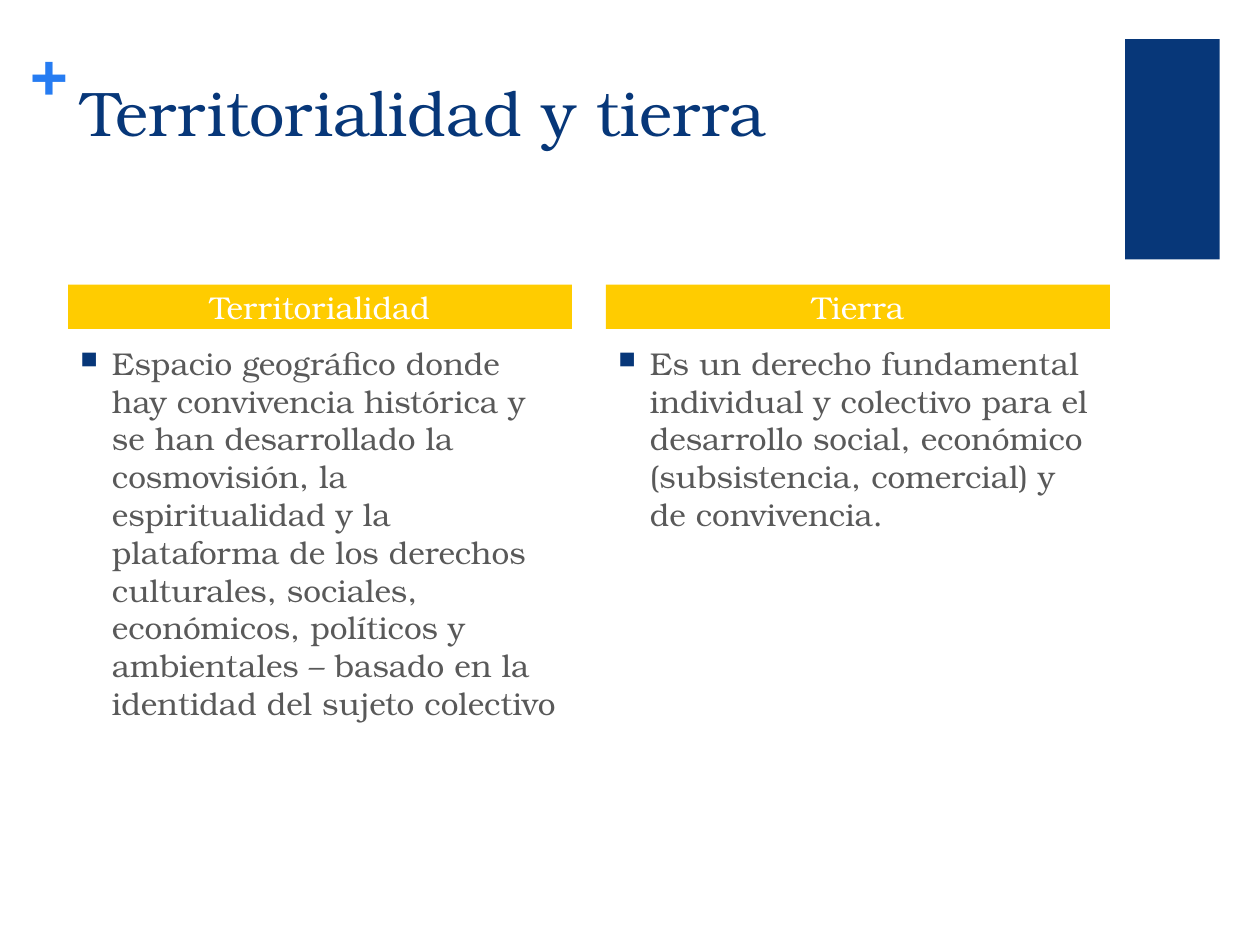
from dataclasses import dataclass

import pptx
import pptx.dml.color
import pptx.enum.shapes
import pptx.enum.text
import pptx.oxml
import pptx.oxml.ns
import pptx.util

Inches = pptx.util.Inches
Pt = pptx.util.Pt
RGBColor = pptx.dml.color.RGBColor
Align = pptx.enum.text.PP_ALIGN
Anchor = pptx.enum.text.MSO_ANCHOR

NAVY = RGBColor(0x07, 0x37, 0x79)
BLUE = RGBColor(0x26, 0x7C, 0xF2)
YELLOW = RGBColor(0xFF, 0xCC, 0x00)
GRAY = RGBColor(0x59, 0x59, 0x59)
WHITE = RGBColor(0xFF, 0xFF, 0xFF)
FONT = "TeX Gyre Bonum"

# Two-column grid, in inches
LEFT, COLUMN_WIDTH, COLUMN_STEP = 0.54, 4, 4.27
HEADING_TOP, HEADING_HEIGHT = 2.26, 0.35
BODY_TOP, BODY_HEIGHT = 2.68, 4.02


@dataclass
class Column:
    heading: str
    body: str


COLUMNS = [
    Column(
        "Territorialidad",
        "Espacio geográfico donde hay convivencia histórica y se han "
        "desarrollado la cosmovisión, la espiritualidad y la plataforma de "
        "los derechos culturales, sociales, económicos, políticos y "
        "ambientales – basado en la identidad del sujeto colectivo",
    ),
    Column(
        "Tierra",
        "Es un derecho fundamental individual y colectivo para el desarrollo "
        "social, económico (subsistencia, comercial) y de convivencia.",
    ),
]


def set_all(target, values: dict) -> None:
    for name, value in values.items():
        setattr(target, name, value)


def write(box, text: str, size: float, color: RGBColor, bold: bool = False,
          align=Align.LEFT, frame_format: dict | None = None):
    """Fill a shape with one formatted paragraph and return the paragraph."""
    frame = box.text_frame
    set_all(frame, {"word_wrap": True, "vertical_anchor": Anchor.TOP,
                    **(frame_format or {})})
    para = frame.paragraphs[0]
    para.alignment = align
    span = para.add_run()
    span.text = text
    set_all(span.font, {"name": FONT, "size": Pt(size), "bold": bold})
    span.font.color.rgb = color
    return para


def add_block(page, left: float, top: float, width: float, height: float,
              color: RGBColor):
    box = page.shapes.add_shape(
        pptx.enum.shapes.MSO_SHAPE.RECTANGLE,
        *map(Inches, (left, top, width, height)))
    box.shadow.inherit = False
    box.fill.solid()
    box.fill.fore_color.rgb = color
    box.line.fill.background()
    return box


def add_text_box(page, left: float, top: float, width: float, height: float):
    return page.shapes.add_textbox(*map(Inches, (left, top, width, height)))


def add_bullet(para, color: RGBColor) -> None:
    properties = para._p.get_or_add_pPr()
    properties.set("marL", str(Inches(0.25)))
    properties.set("indent", str(Inches(-0.25)))
    namespace = pptx.oxml.ns.nsdecls("a")
    for xml in (
        f'<a:buClr {namespace}><a:srgbClr val="{color}"/></a:buClr>',
        f'<a:buSzPct {namespace} val="75000"/>',
        f'<a:buChar {namespace} char="■"/>',
    ):
        properties.append(pptx.oxml.parse_xml(xml))


def add_column(page, index: int, column: Column) -> None:
    left = LEFT + index * COLUMN_STEP
    body = add_text_box(page, left, BODY_TOP, COLUMN_WIDTH, BODY_HEIGHT)
    para = write(body, column.body, 18, GRAY)
    para.space_before = Pt(20)
    add_bullet(para, NAVY)

    heading = add_block(page, left, HEADING_TOP, COLUMN_WIDTH,
                        HEADING_HEIGHT, YELLOW)
    write(heading, column.heading, 18, WHITE, align=Align.CENTER,
          frame_format={"vertical_anchor": Anchor.MIDDLE,
                        "margin_top": 0, "margin_bottom": 0})


def main() -> None:
    deck = pptx.Presentation()
    set_all(deck, {"slide_width": Inches(10), "slide_height": Inches(7.5)})
    page = deck.slides.add_slide(deck.slide_layouts[5])

    # Corner block and plus sign
    add_block(page, 8.93, 0.31, 0.75, 1.75, NAVY)
    plus = add_text_box(page, 0.24, 0.25, 0.28, 0.61)
    margins = ("margin_left", "margin_top", "margin_right", "margin_bottom")
    write(plus, "+", 36, BLUE, bold=True,
          frame_format={**dict.fromkeys(margins, 0), "word_wrap": False})

    # Title
    title = page.shapes.title
    set_all(title, {"left": Inches(0.55), "top": Inches(0.53),
                    "width": Inches(8.26), "height": Inches(1.22)})
    write(title, "Territorialidad y tierra", 36, NAVY)

    # Compared concepts
    for index, column in enumerate(COLUMNS):
        add_column(page, index, column)

    deck.save("out.pptx")


if __name__ == "__main__":
    main()
